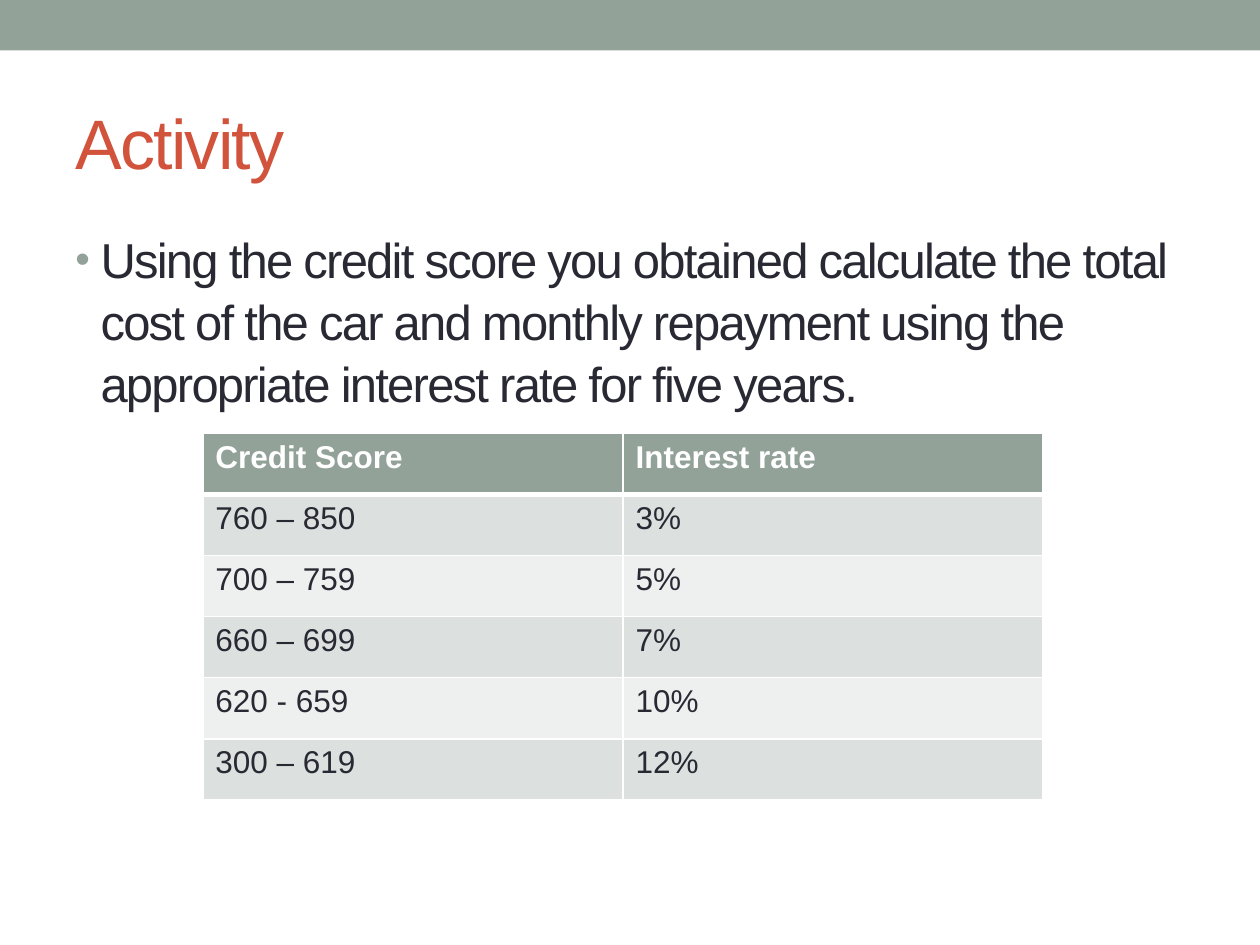
from pptx import Presentation
from pptx.dml.color import RGBColor
from pptx.enum.shapes import MSO_SHAPE
from pptx.enum.text import MSO_ANCHOR
from pptx.oxml import parse_xml
from pptx.oxml.ns import nsdecls
from pptx.util import Inches, Pt

HUES = {"sage": "93A299", "rust": "D2533C", "ink": "292934",
        "white": "FFFFFF", "dark": "DCE0DE", "light": "EEF0EF"}
RATES = [("Credit Score", "Interest rate"), ("760 – 850", "3%"),
         ("700 – 759", "5%"), ("660 – 699", "7%"),
         ("620 - 659", "10%"), ("300 – 619", "12%")]


def style(para, size, hue, bold=False):
    font = para.font
    font.name, font.size, font.bold = "Arial", Pt(size), bold
    font.color.rgb = RGBColor.from_string(HUES[hue])


def add_text(top, high, text, size, hue):
    box = slide.shapes.add_textbox(edge, top, wide - 2 * edge, high)
    box.text_frame.word_wrap = True
    para = box.text_frame.paragraphs[0]
    run = para.add_run()
    run.text = text
    style(para, size, hue)
    run.font._element.set("spc", "-100")
    return box.text_frame


deck = Presentation()
deck.slide_width, deck.slide_height = Inches(10), Inches(7.5)
wide, edge = deck.slide_width, Inches(0.5)
slide = deck.slides.add_slide(deck.slide_layouts[6])

# Top band
band = slide.shapes.add_shape(MSO_SHAPE.RECTANGLE, 0, 0, wide, Inches(0.4))
band.shadow.inherit = False
band.fill.solid()
band.fill.fore_color.rgb = RGBColor.from_string(HUES["sage"])
band.line.fill.background()

# Title
title = add_text(Inches(0.58), Inches(1.08), "Activity", 40, "rust")
title.vertical_anchor = MSO_ANCHOR.MIDDLE

# Task with its bullet
task = add_text(Inches(1.75), Inches(5.33),
                "Using the credit score you obtained calculate the total cost "
                "of the car and monthly repayment using the appropriate "
                "interest rate for five years.", 28, "ink")
para = task.paragraphs[0]
para.line_spacing = 1.05
props = para._p.get_or_add_pPr()
props.set("marL", str(Inches(0.2)))
props.set("indent", str(-Inches(0.2)))
marks = ['<a:spcBef {}><a:spcPct val="20000"/></a:spcBef>',
         '<a:buClr {}><a:srgbClr val="%s"/></a:buClr>' % HUES["sage"],
         '<a:buSzPct {} val="85000"/>',
         '<a:buFont {} typeface="Arial"/>',
         '<a:buChar {} char="•"/>']
spot = props.index(props.find("{*}lnSpc")) + 1
for step, mark in enumerate(marks):
    props.insert(spot + step, parse_xml(mark.format(nsdecls("a"))))

# Rate table
rows, cols = len(RATES), len(RATES[0])
grid = slide.shapes.add_table(rows, cols, Inches(1.61), Inches(3.44),
                              Inches(6.67), Inches(2.91)).table
for r, row in enumerate(RATES):
    for c, text in enumerate(row):
        cell = grid.cell(r, c)
        cell.text = text
        head = r == 0
        style(cell.text_frame.paragraphs[0], 18, "white" if head else "ink", head)
        fill = "sage" if head else "dark" if r % 2 else "light"
        cell.fill.solid()
        cell.fill.fore_color.rgb = RGBColor.from_string(HUES[fill])
        # White rules, thicker below the header
        for n, side in enumerate("LRTB"):
            thick = (r, side) in ((0, "B"), (1, "T"))
            rule = parse_xml(
                f'<a:ln{side} {nsdecls("a")} w="{Pt(3 if thick else 1)}"><a:solidFill>'
                f'<a:srgbClr val="{HUES["white"]}"/></a:solidFill></a:ln{side}>')
            cell._tc.get_or_add_tcPr().insert(n, rule)

deck.save("out.pptx")
